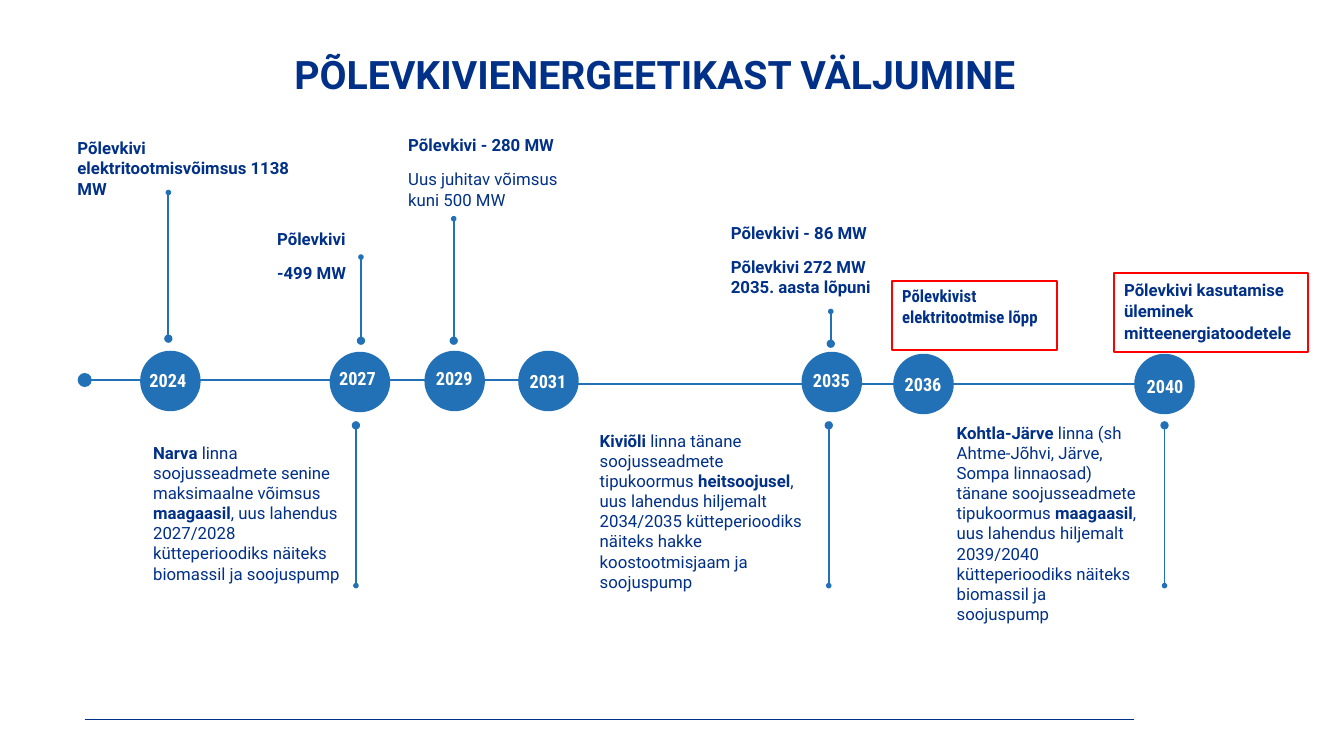
from pptx import Presentation
from pptx.dml.color import RGBColor
from pptx.enum.shapes import MSO_CONNECTOR as CONN, MSO_SHAPE as SHAPE
from pptx.enum.text import PP_ALIGN as ALIGN
from pptx.oxml.ns import qn
from pptx.util import Inches, Pt
from lxml.etree import SubElement

NAVY = RGBColor(0x00, 0x30, 0x87)
BLUE = RGBColor(0x22, 0x71, 0xB7)
RED = RGBColor(0xFF, 0x00, 0x00)
WHITE = RGBColor(0xFF, 0xFF, 0xFF)
BODY, NARROW = "Roboto", "Roboto Condensed"

TITLE = "PÕLEVKIVIENERGEETIKAST VÄLJUMINE"
DOT = 0.6
LABEL_W, LABEL_H = 0.71, 0.32

# year, circle left, circle top, label left, label top
YEARS = [
    ("2024", 1.39, 3.48, 1.31, 3.61),
    ("2027", 3.27, 3.49, 3.19, 3.59),
    ("2029", 4.21, 3.48, 4.15, 3.59),
    ("2031", 5.14, 3.48, 5.08, 3.62),
    ("2035", 7.95, 3.49, 7.89, 3.61),
    ("2036", 8.86, 3.51, 8.80, 3.65),
    ("2040", 11.25, 3.51, 11.20, 3.67),
]
AXIS = [
    (1.89, 3.41, 3.77),
    (3.77, 5.24, 3.77),
    (5.73, 7.96, 3.81),
    (8.34, 9.23, 3.81),
    (9.36, 11.27, 3.81),
]
STEMS_ABOVE = [(1.67, 1.91, 3.36), (3.58, 2.55, 3.38), (4.5, 2.17, 3.38), (8.24, 3.09, 3.41)]
STEMS_BELOW = [(x, 5.81, 4.22) for x in (3.53, 8.22, 11.55)]

NOTES = [
    ((0.67, 1.32, 2.43, 0.46), [[("Põlevkivi elektritootmisvõimsus 1138 MW", True)]]),
    ((2.65, 2.22, 1.07, 0.6), [[("Põlevkivi", True)], [("-499 MW", True)]]),
    ((3.95, 1.29, 1.72, 0.53), [
        [("Põlevkivi - 280 MW", True)],
        [("Uus juhitav võimsus kuni 500 MW", False)]]),
    ((7.15, 2.16, 1.65, 0.93), [
        [("Põlevkivi - 86 MW", True)],
        [("Põlevkivi 272 MW 2035. aasta lõpuni", True)]]),
    ((1.42, 4.34, 2.11, 2.24), [[
        ("Narva ", True),
        ("linna soojusseadmete senine maksimaalne võimsus ", False),
        ("maagaasil", True),
        (", uus lahendus 2027/2028 kütteperioodiks näiteks biomassil ja soojuspump", False)]]),
    ((5.85, 4.22, 2.33, 2.31), [[
        ("Kiviõli", True),
        (" linna tänane soojusseadmete tipukoormus ", False),
        ("heitsoojusel", True),
        (", uus lahendus hiljemalt 2034/2035 kütteperioodiks näiteks hakke "
         "koostootmisjaam ja soojuspump", False)]]),
    ((9.39, 4.14, 2.04, 2.21), [[
        ("Kohtla-Järve", True),
        (" linna (sh Ahtme-Jõhvi, Järve, Sompa linnaosad) tänane soojusseadmete "
         "tipukoormus ", False),
        ("maagaasil", True),
        (", uus lahendus hiljemalt 2039/2040 kütteperioodiks näiteks biomassil ja "
         "soojuspump", False)]]),
]
MILESTONES = [
    ((8.85, 2.79, 1.63, 0.68), "Põlevkivist elektritootmise lõpp", NARROW, 1.0),
    ((11.05, 2.71, 1.92, 0.78), "Põlevkivi kasutamise üleminek mitteenergiatoodetele", BODY, 1.07),
]

prs = Presentation()
prs.slide_width, prs.slide_height = Inches(13.33), Inches(7.5)
slide = prs.slides.add_slide(prs.slide_layouts[6])


def add_line(x1, y1, x2, y2, width, color=BLUE, head=None, tail=None):
    line = slide.shapes.add_connector(CONN.STRAIGHT, *map(Inches, (x1, y1, x2, y2)))
    line.line.color.rgb = color
    line.line.width = Pt(width)
    ln = line.line._get_or_add_ln()
    for tag, size in (("a:headEnd", head), ("a:tailEnd", tail)):
        if size:
            SubElement(ln, qn(tag), type="oval", w=size, len=size)
    SubElement(line._element.spPr, qn("a:effectLst"))


def add_shape(kind, box):
    sp = slide.shapes.add_shape(kind, *map(Inches, box))
    sp.shadow.inherit = False
    return sp


def set_font(p, name, size, color, bold=None):
    p.font.name, p.font.size, p.font.bold = name, Pt(size), bold
    p.font.color.rgb = color


def add_text(box, paragraphs, name=BODY, size=12, color=NAVY, align=ALIGN.LEFT, wrap=True):
    tf = slide.shapes.add_textbox(*map(Inches, box)).text_frame
    tf.word_wrap = wrap
    for i, runs in enumerate(paragraphs):
        p = tf.add_paragraph() if i else tf.paragraphs[0]
        p.alignment = align
        if i:
            p.space_before = Pt(10)
        set_font(p, name, size, color)
        for text, bold in runs:
            r = p.add_run()
            r.text, r.font.bold = text, bold


add_line(0.84, 7.14, 11.25, 7.14, 1, NAVY)
add_text((2.82, 0.45, 7.45, 0.57), [[(TITLE, True)]], size=28, wrap=False)

add_line(1.51, 3.77, 0.84, 3.77, 2, tail="lg")
for x1, x2, y in AXIS:
    add_line(x1, y, x2, y, 2)
for x, y1, y2 in STEMS_ABOVE + STEMS_BELOW:
    add_line(x, y1, x, y2, 1.25, head="sm", tail="med")

for year, x, y, label_x, label_y in YEARS:
    sp = add_shape(SHAPE.OVAL, (x, y, DOT, DOT))
    sp.fill.solid()
    sp.fill.fore_color.rgb = BLUE
    sp.line.fill.background()
    add_text((label_x, label_y, LABEL_W, LABEL_H), [[(year, True)]],
             NARROW, 13, WHITE, ALIGN.CENTER)

for box, paragraphs in NOTES:
    add_text(box, paragraphs)

for box, text, font, spacing in MILESTONES:
    sp = add_shape(SHAPE.RECTANGLE, box)
    sp.fill.background()
    sp.line.color.rgb = RED
    sp.line.width = Pt(1.5)
    tf = sp.text_frame
    tf.word_wrap = True
    tf.vertical_anchor = 1
    p = tf.paragraphs[0]
    p.text, p.alignment, p.line_spacing = text, ALIGN.LEFT, spacing
    set_font(p, font, 12, NAVY, True)

prs.save("out.pptx")
